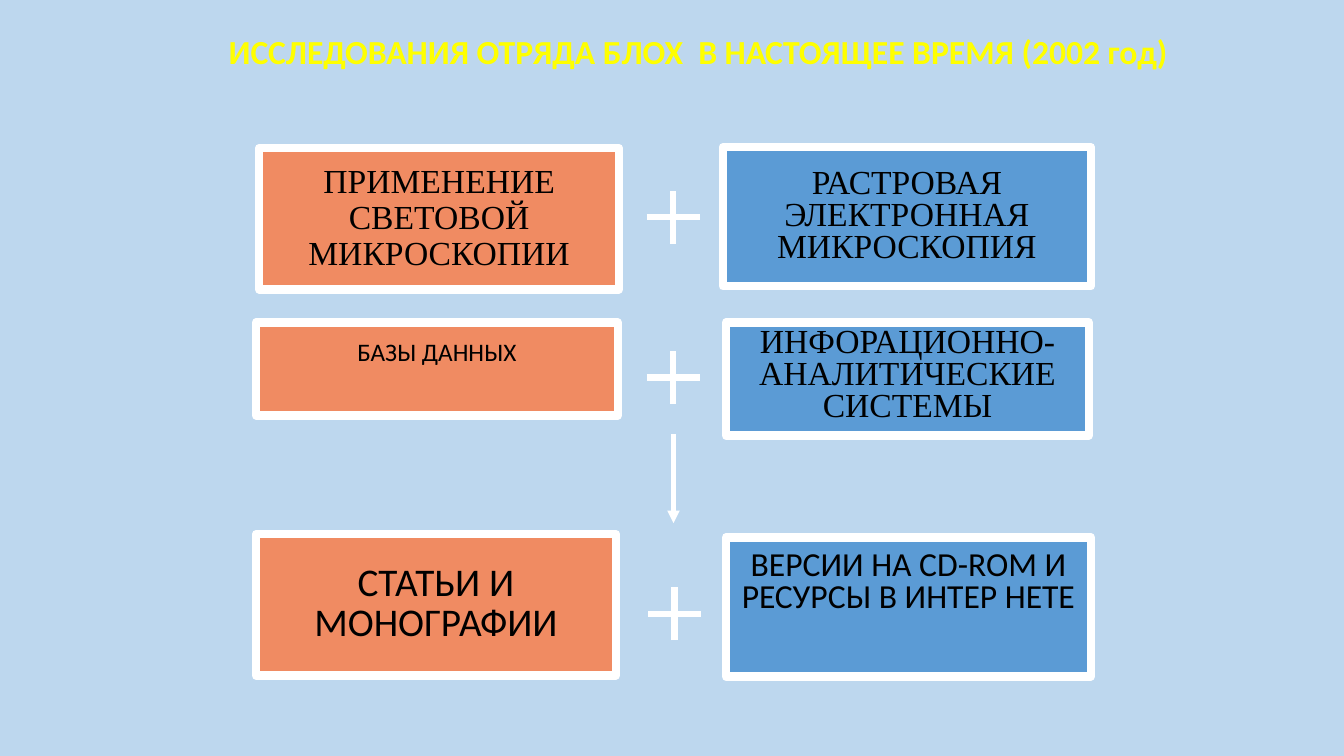
from dataclasses import dataclass

from lxml.etree import SubElement
from pptx import Presentation
from pptx.dml.color import RGBColor
from pptx.enum.shapes import MSO_CONNECTOR as Connector, MSO_SHAPE as Shape
from pptx.enum.text import MSO_ANCHOR as Anchor, PP_ALIGN as Align
from pptx.oxml.ns import qn
from pptx.util import Inches, Pt

WIDTH, HEIGHT = 13.33, 7.5
SKY, YELLOW, WHITE, BLACK = "BDD7EE", "FFFF00", "FFFFFF", "000000"
ORANGE, BLUE = "F08B62", "5B9BD5"
SANS, SERIF = "Calibri", "Times New Roman"
ARM_X, ARM_Y = 1.97, 3.5  # half of a plus sign, in percent of the slide


@dataclass
class Card:
    """A framed box; position and size in percent of the slide."""
    text: str
    left: float
    top: float
    width: float
    height: float
    fill: str
    font: str = SANS
    size: int = 24
    spacing: float = 0.8
    anchor: Anchor = Anchor.TOP
    inset: float = 0.05


@dataclass
class Plus:
    """Centre of a plus sign, in percent of the slide."""
    x: float
    y: float


CARDS = [
    Card("ПРИМЕНЕНИЕ СВЕТОВОЙ МИКРОСКОПИИ", 19.28, 19.6, 26.78, 18.67, ORANGE,
         SERIF, spacing=0.9, anchor=Anchor.MIDDLE),
    Card("РАСТРОВАЯ ЭЛЕКТРОННАЯ МИКРОСКОПИЯ", 53.79, 19.47, 27.38, 18.4, BLUE,
         SERIF, anchor=Anchor.MIDDLE),
    Card("БАЗЫ ДАННЫХ", 19.05, 42.67, 26.93, 12.27, ORANGE,
         size=18, spacing=1.0, inset=0.14),
    Card("ИНФОРАЦИОННО-АНАЛИТИЧЕСКИЕ СИСТЕМЫ", 54.01, 42.67, 27.01, 14.93, BLUE, SERIF),
    Card("СТАТЬИ И МОНОГРАФИИ", 19.05, 70.67, 26.78, 18.67, ORANGE,
         size=28, spacing=0.85, anchor=Anchor.MIDDLE),
    Card("ВЕРСИИ НА CD-ROM И РЕСУРСЫ В ИНТЕР НЕТЕ", 54.01, 71.07, 27.16, 18.4, BLUE,
         inset=0.13),
]
PLUSES = [Plus(50.08, 28.73), Plus(50.08, 49.93), Plus(50.19, 81.2)]


def color(value: str) -> RGBColor:
    return RGBColor.from_string(value)


def across(percent: float) -> int:
    return Inches(WIDTH * percent / 100)


def down(percent: float) -> int:
    return Inches(HEIGHT * percent / 100)


def write(box, text: str, *, font: str, size: int, fill: str, bold: bool = False,
          align: Align = Align.LEFT, spacing: float = 0.9,
          anchor: Anchor = Anchor.TOP, inset: float = 0.05) -> None:
    frame = box.text_frame
    frame.word_wrap = True
    frame.vertical_anchor = anchor
    frame.margin_left = frame.margin_right = Inches(0.1)
    frame.margin_top, frame.margin_bottom = Inches(inset), Inches(0.05)
    para = frame.paragraphs[0]
    para.alignment, para.line_spacing = align, spacing
    span = para.add_run()
    span.text = text
    span.font.name, span.font.size, span.font.bold = font, Pt(size), bold
    span.font.color.rgb = color(fill)


def draw_card(page, card: Card) -> None:
    box = page.shapes.add_shape(Shape.RECTANGLE, across(card.left), down(card.top),
                                across(card.width), down(card.height))
    box.shadow.inherit = False
    box.fill.solid()
    box.fill.fore_color.rgb = color(card.fill)
    box.line.color.rgb = color(WHITE)
    box.line.width = Pt(6)
    write(box, card.text, font=card.font, size=card.size, fill=BLACK, align=Align.CENTER,
          spacing=card.spacing, anchor=card.anchor, inset=card.inset)


def draw_line(page, x1: float, y1: float, x2: float, y2: float, *,
              weight: float, arrow: bool = False) -> None:
    line = page.shapes.add_connector(Connector.STRAIGHT, across(x1), down(y1),
                                     across(x2), down(y2))
    line.line.color.rgb = color(WHITE)
    line.line.width = Pt(weight)
    if arrow:
        SubElement(line.line._get_or_add_ln(), qn("a:tailEnd"), type="triangle")
    SubElement(line._element.spPr, qn("a:effectLst"))


def draw_plus(page, plus: Plus) -> None:
    draw_line(page, plus.x - ARM_X, plus.y, plus.x + ARM_X, plus.y, weight=4.5)
    draw_line(page, plus.x, plus.y + ARM_Y, plus.x, plus.y - ARM_Y, weight=4.5)


def main() -> None:
    deck = Presentation()
    deck.slide_width, deck.slide_height = Inches(WIDTH), Inches(HEIGHT)
    page = deck.slides.add_slide(deck.slide_layouts[6])
    page.background.fill.solid()
    page.background.fill.fore_color.rgb = color(SKY)

    # Title
    title = page.shapes.add_textbox(across(16.28), down(4), across(75.84), down(16.67))
    write(title, "ИССЛЕДОВАНИЯ ОТРЯДА БЛОХ  В НАСТОЯЩЕЕ ВРЕМЯ (2002 год)",
          font=SANS, size=24, fill=YELLOW, bold=True)

    # Methods, data and results, joined by plus signs
    for card in CARDS:
        draw_card(page, card)
    for plus in PLUSES:
        draw_plus(page, plus)

    # Arrow down to the results
    draw_line(page, 50.11, 57.47, 50.11, 69.2, weight=3, arrow=True)

    deck.save("out.pptx")


if __name__ == "__main__":
    main()
